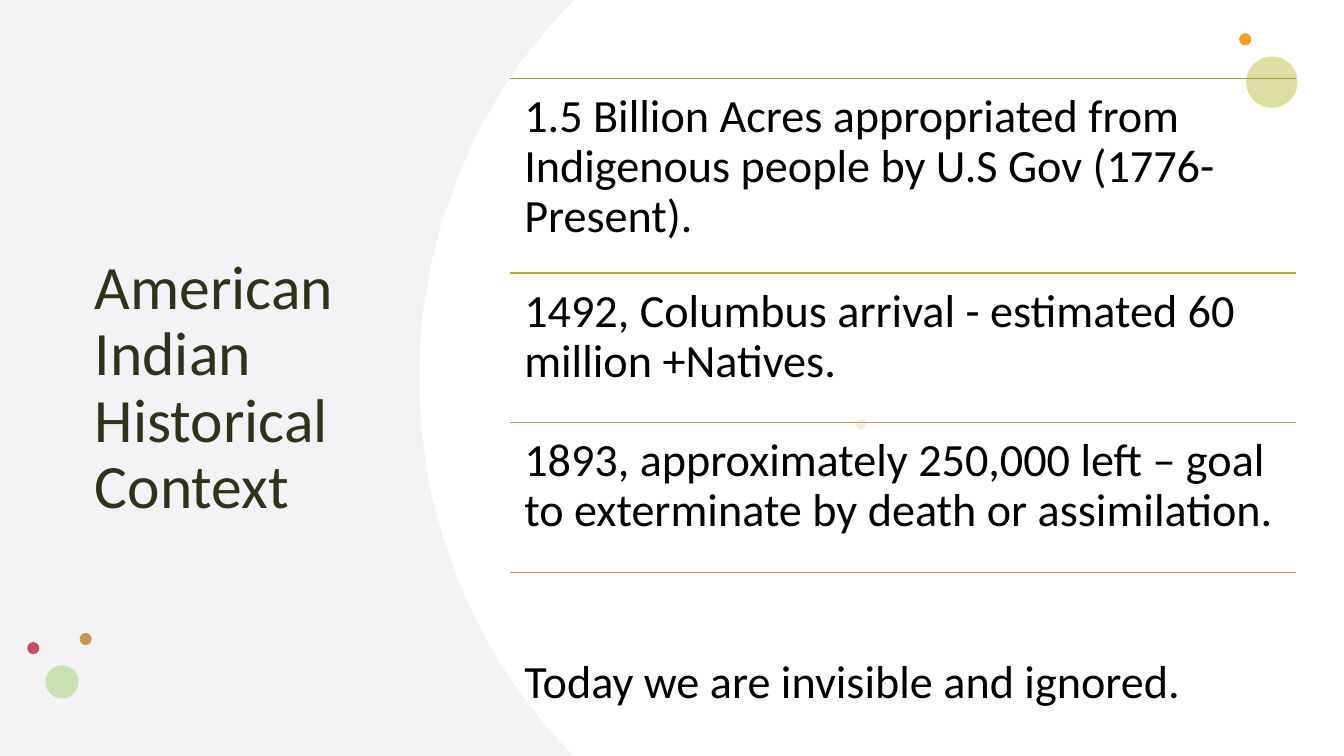
import lxml.etree
import pptx
import pptx.dml.color
import pptx.enum.shapes
import pptx.enum.text
import pptx.oxml.ns
import pptx.util

RGBColor = pptx.dml.color.RGBColor
ANCHOR = pptx.enum.text.MSO_ANCHOR

PIXEL = 9144
WIDTH, HEIGHT = 1333, 750
FONT = "Calibri"

WHITE = RGBColor(0xFF, 0xFF, 0xFF)
BLACK = RGBColor(0x00, 0x00, 0x00)
LAVENDER = RGBColor(0xF4, 0xF2, 0xF5)
DARK_OLIVE = RGBColor(0x30, 0x32, 0x1C)
LIME = RGBColor(0xCF, 0xD4, 0x7D)
ORANGE = RGBColor(0xF3, 0x9E, 0x29)
PINK = RGBColor(0xE3, 0xBE, 0xBE)
OCHRE = RGBColor(0xC3, 0x9A, 0x4D)
PALE_GREEN = RGBColor(0xCA, 0xE1, 0xB2)
CRIMSON = RGBColor(0xC3, 0x4D, 0x62)
OLIVE = RGBColor(0xA0, 0xA7, 0x37)
MUSTARD = RGBColor(0xB3, 0xAA, 0x3B)
GOLD = RGBColor(0xBF, 0xA4, 0x40)

DOTS = [
    (1236, 56, 51, LIME, 72),
    (1229, 33, 12, ORANGE, 100),
    (849, 416, 10, PINK, 28),
    (79, 628, 12, OCHRE, 100),
    (45, 660, 33, PALE_GREEN, 100),
    (27, 637, 12, CRIMSON, 100),
]
RULES = [(78, OLIVE), (271, MUSTARD), (419, GOLD), (568, OCHRE)]
FACTS = [
    (78, 192, "1.5 Billion Acres appropriated from Indigenous people by U.S Gov (1776-Present)."),
    (271, 149, "1492, Columbus arrival - estimated 60 million +Natives."),
    (419, 149, "1893, approximately 250,000 left – goal to exterminate by death or assimilation."),
    (639, 78, "Today we are invisible and ignored."),
]
RULE_LEFT, RULE_RIGHT = 506, 1285
FACT_WIDTH = 778


def px(length):
    return pptx.util.Emu(round(length * PIXEL))


def curve(start, first, second, end, steps=24):
    points = []
    for step in range(1, steps + 1):
        t = step / steps
        weights = ((1 - t) ** 3, 3 * t * (1 - t) ** 2, 3 * t * t * (1 - t), t ** 3)
        points.append(tuple(
            sum(weight * value for weight, value in zip(weights, values))
            for values in zip(start, first, second, end)
        ))
    return points


def write_text(frame, text, *, size, color, anchor, inset):
    frame.word_wrap = True
    frame.auto_size = pptx.enum.text.MSO_AUTO_SIZE.NONE
    frame.vertical_anchor = anchor
    frame.margin_left = frame.margin_right = px(inset)
    frame.margin_top = frame.margin_bottom = px(inset)
    paragraph = frame.paragraphs[0]
    paragraph.alignment = pptx.enum.text.PP_ALIGN.LEFT
    paragraph.line_spacing = 0.9
    run = paragraph.add_run()
    run.text = text
    run.font.name = FONT
    run.font.size = pptx.util.Pt(size)
    run.font.color.rgb = color


class SlideBuilder:
    """Draw styled elements on the current slide."""

    def __init__(self, slide):
        self.slide = slide
        fill = slide.background.fill
        fill.solid()
        fill.fore_color.rgb = LAVENDER

    def paint(self, shape, color):
        shape.shadow.inherit = False
        shape.fill.solid()
        shape.fill.fore_color.rgb = color
        shape.line.fill.background()

    def title(self, left, top, width, height, text):
        shape = self.slide.shapes.title
        shape.left, shape.top = px(left), px(top)
        shape.width, shape.height = px(width), px(height)
        write_text(shape.text_frame, text, size=44, color=DARK_OLIVE,
                   anchor=ANCHOR.MIDDLE, inset=10)

    def panel(self, points, color):
        builder = self.slide.shapes.build_freeform(*points[0], scale=PIXEL)
        builder.add_line_segments(points[1:], close=True)
        self.paint(builder.convert_to_shape(), color)

    def dot(self, left, top, diameter, color, opacity):
        shape = self.slide.shapes.add_shape(
            pptx.enum.shapes.MSO_SHAPE.OVAL,
            px(left), px(top), px(diameter), px(diameter))
        self.paint(shape, color)
        if opacity < 100:
            color_element = shape.element.spPr.find(
                ".//" + pptx.oxml.ns.qn("a:srgbClr"))
            lxml.etree.SubElement(
                color_element, pptx.oxml.ns.qn("a:alpha"), val=str(opacity * 1000))

    def rule(self, top, color):
        connector = self.slide.shapes.add_connector(
            pptx.enum.shapes.MSO_CONNECTOR.STRAIGHT,
            px(RULE_LEFT), px(top), px(RULE_RIGHT), px(top))
        connector.line.color.rgb = color
        connector.line.width = pptx.util.Pt(1)
        lxml.etree.SubElement(
            connector.element.spPr, pptx.oxml.ns.qn("a:effectLst"))

    def fact(self, top, height, text):
        shape = self.slide.shapes.add_textbox(
            px(RULE_LEFT), px(top), px(FACT_WIDTH), px(height))
        write_text(shape.text_frame, text, size=33, color=BLACK,
                   anchor=ANCHOR.TOP, inset=14)


def main():
    presentation = pptx.Presentation()
    presentation.slide_width = px(WIDTH)
    presentation.slide_height = px(HEIGHT)
    builder = SlideBuilder(
        presentation.slides.add_slide(presentation.slide_layouts[5]))

    lower_arc = curve((539, 717), (462, 624), (416, 505), (416, 375))
    upper_arc = curve((416, 375), (416, 236), (469, 110), (556, 14))
    builder.panel(
        [(570, 0), (WIDTH, 0), (WIDTH, HEIGHT), (569, HEIGHT), (539, 717)]
        + lower_arc + upper_arc, WHITE)
    for dot in DOTS:
        builder.dot(*dot)
    builder.title(84, 104, 313, 564, "American Indian Historical Context")
    for rule in RULES:
        builder.rule(*rule)
    for fact in FACTS:
        builder.fact(*fact)

    presentation.save("out.pptx")


if __name__ == "__main__":
    main()
